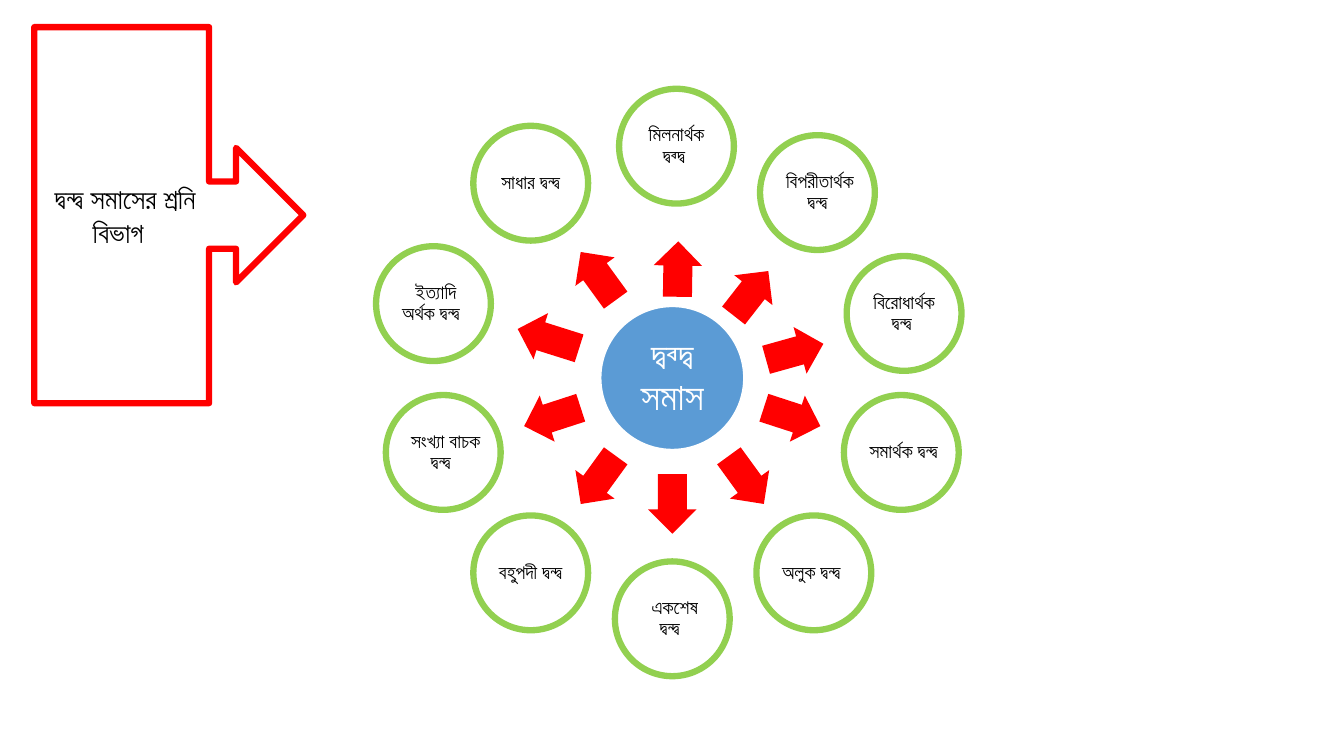
from dataclasses import dataclass
from math import cos, radians, sin

from pptx import Presentation
from pptx.dml.color import RGBColor
from pptx.enum.shapes import MSO_SHAPE as Shape
from pptx.enum.text import MSO_ANCHOR, PP_ALIGN
from pptx.shapes.autoshape import Shape as AutoShape
from pptx.slide import Slide
from pptx.util import Pt

WHITE = RGBColor(0xFF, 0xFF, 0xFF)
BLACK = RGBColor(0x00, 0x00, 0x00)
BLUE = RGBColor(0x5B, 0x9B, 0xD5)
GREEN = RGBColor(0x92, 0xD0, 0x50)
RED = RGBColor(0xFF, 0x00, 0x00)

CENTER_X, CENTER_Y = 480.2, 270
HUB_SIZE, BALL_SIZE = 102.2, 82
BALL_RADIUS, ARROW_RADIUS = 172, 90
ARROW_HEIGHT = 34.6


@dataclass(frozen=True)
class Spoke:
    """One kind of compound; shifts and turn are offsets from the even ring."""
    label: str
    ball_shift: tuple[float, float] = (0, 0)
    arrow_shift: tuple[float, float] = (0, 0)
    arrow_length: float = 42.5
    turn: float = 0


# Clockwise from the top
SPOKES = [
    Spoke("মিলনার্থক দ্বব্দ্ব ", (3, 6.4), (4, 12.2), 39.6, 0.9),
    Spoke(" বিপরীতার্থক দ্বন্দ্ব", (2.6, 6.7), (3.3, 12.3), 40.3, 2),
    Spoke("বিরোধার্থক দ্বন্দ্ব ", (2, 7), (1.9, 9.1), turn=2.4),
    Spoke(" সমার্থক দ্বন্দ্ব "),
    Spoke("অলুক দ্বন্দ্ব "),
    Spoke(" একশেষ\nদ্বন্দ্ব "),
    Spoke(" বহুপদী দ্বন্দ্ব "),
    Spoke(" সংখ্যা বাচক দ্বন্দ্ব "),
    Spoke(" ইত্যাদি অর্থক দ্বন্দ্ব ", (-7, 0), (-2.9, -0.3), 46, -0.5),
    Spoke(" সাধার দ্বন্দ্ব "),
]


def add_centered(s: Slide, kind: Shape, x: float, y: float, width: float, height: float,
                 fill: RGBColor, line: RGBColor | None = None,
                 line_width: float = 4.5) -> AutoShape:
    """Add a preset shape whose middle is at x, y."""
    sp = s.shapes.add_shape(kind, Pt(x - width / 2), Pt(y - height / 2), Pt(width), Pt(height))
    sp.shadow.inherit = False
    sp.fill.solid()
    sp.fill.fore_color.rgb = fill
    if line is None:
        sp.line.fill.background()
    else:
        sp.line.color.rgb = line
        sp.line.width = Pt(line_width)
    return sp


def write(sp: AutoShape, text: str, *, size: float, font: str = "Roboto",
          color: RGBColor = BLACK, inset: float | None = None,
          spacing: float | None = None) -> None:
    tf = sp.text_frame
    tf.word_wrap = True
    tf.vertical_anchor = MSO_ANCHOR.MIDDLE
    if inset is not None:
        tf.margin_left = tf.margin_right = tf.margin_top = tf.margin_bottom = Pt(inset)
    p = tf.paragraphs[0]
    p.text = text
    p.alignment = PP_ALIGN.CENTER
    p.line_spacing = spacing
    for r in p.runs:
        r.font.size = Pt(size)
        r.font.name = font
        r.font.color.rgb = color


def ring_point(radius: float, angle: float, shift: tuple[float, float]) -> tuple[float, float]:
    return (CENTER_X + radius * cos(radians(angle)) + shift[0],
            CENTER_Y + radius * sin(radians(angle)) + shift[1])


def add_spoke(s: Slide, spoke: Spoke, angle: float) -> None:
    x, y = ring_point(ARROW_RADIUS, angle, spoke.arrow_shift)
    arrow = add_centered(s, Shape.RIGHT_ARROW, x, y, spoke.arrow_length, ARROW_HEIGHT, RED)
    arrow.adjustments[0] = 0.6
    arrow.adjustments[1] = 0.5
    arrow.rotation = (angle + spoke.turn) % 360

    x, y = ring_point(BALL_RADIUS, angle, spoke.ball_shift)
    ball = add_centered(s, Shape.OVAL, x, y, BALL_SIZE, BALL_SIZE, WHITE, GREEN)
    write(ball, spoke.label, size=14, inset=1.4, spacing=0.9)


def main() -> None:
    prs = Presentation()
    prs.slide_width, prs.slide_height = Pt(960), Pt(540)
    s = prs.slides.add_slide(prs.slide_layouts[6])

    hub = add_centered(s, Shape.OVAL, CENTER_X, CENTER_Y, HUB_SIZE, HUB_SIZE, BLUE, WHITE, 1)
    write(hub, "দ্বব্দ্ব সমাস", size=27, font="Calibri", color=WHITE, inset=2.7, spacing=0.9)

    for i, spoke in enumerate(SPOKES):
        add_spoke(s, spoke, 270 + i * 360 / len(SPOKES))

    title = add_centered(s, Shape.RIGHT_ARROW_CALLOUT, 120.6, 153.7, 192.2, 268.6, WHITE, RED)
    write(title, " দ্বন্দ্ব সমাসের শ্রনি বিভাগ ", size=20)

    prs.save("out.pptx")


if __name__ == "__main__":
    main()
